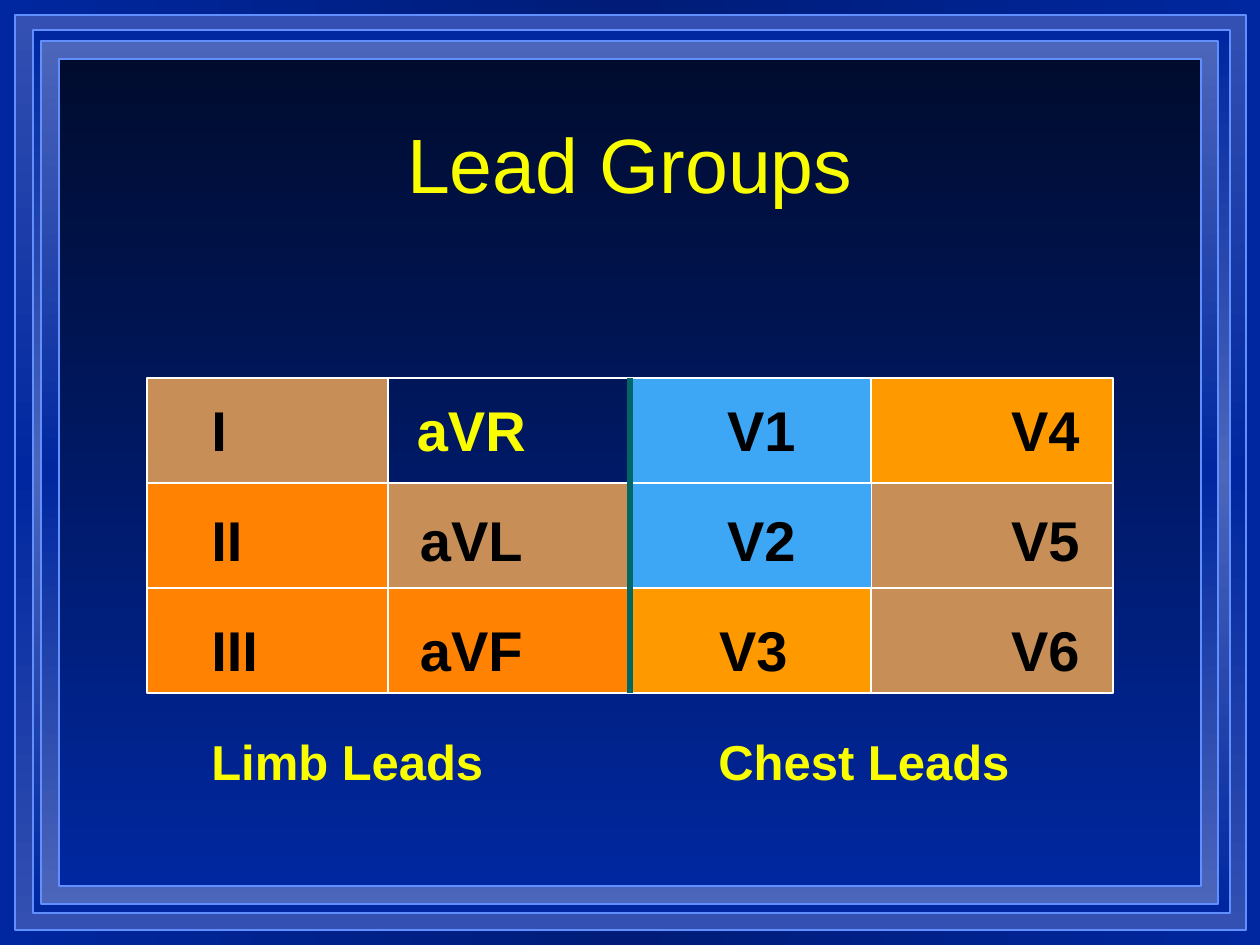
import pptx
import pptx.util
import pptx.dml.color
import pptx.enum.shapes
import pptx.enum.text
import pptx.oxml.ns
from lxml import etree

WIDTH, HEIGHT = 1260, 945
EMU_PER_PX = 914400 / 126
COLORS = {
    "blue": "00279F", "deep": "001C78", "night": "000B2E",
    "haze": "3350B2", "mist": "4C66BB", "edge": "618FFD",
    "yellow": "FAFD00", "black": "000000", "white": "FFFFFF",
    "tan": "C78F57", "orange": "FF8203", "amber": "FF9900",
    "sky": "3DA6F5", "teal": "006666",
}
qn = pptx.oxml.ns.qn
ANCHOR = pptx.enum.text.MSO_ANCHOR
ALIGN = pptx.enum.text.PP_ALIGN


def px(length):
    return pptx.util.Emu(round(length * EMU_PER_PX))


def rgb(name):
    return pptx.dml.color.RGBColor.from_string(COLORS[name])


class SlideBuilder:
    font_name = "Arial"

    def __init__(self, slide):
        self.slide = slide

    def gradient(self, fill, element, names, angle):
        """Spread the named colours evenly over a linear gradient."""
        fill.gradient()
        fill.gradient_angle = angle
        stops = element.find(".//" + qn("a:gsLst"))
        for stop in list(stops):
            stops.remove(stop)
        for index, name in enumerate(names):
            position = str(100000 * index // (len(names) - 1))
            stop = etree.SubElement(stops, qn("a:gs"), pos=position)
            etree.SubElement(stop, qn("a:srgbClr"), val=COLORS[name])

    def background(self, names):
        self.gradient(self.slide.background.fill, self.slide.element, names, 0)

    def rectangle(self, box, fill=None, line=None):
        """Draw a box; fill is a colour name, a tuple of them, or None."""
        shape = self.slide.shapes.add_shape(
            pptx.enum.shapes.MSO_SHAPE.RECTANGLE, *map(px, box))
        shape.shadow.inherit = False
        if fill is None:
            shape.fill.background()
        elif isinstance(fill, tuple):
            self.gradient(shape.fill, shape.element, fill, 270)
        else:
            shape.fill.solid()
            shape.fill.fore_color.rgb = rgb(fill)
        if line:
            shape.line.color.rgb = rgb(line)
            shape.line.width = pptx.util.Pt(1)
        else:
            shape.line.fill.background()

    def text_box(self, box, wrap=True, anchor=ANCHOR.TOP):
        frame = self.slide.shapes.add_textbox(*map(px, box)).text_frame
        frame.word_wrap = wrap
        frame.vertical_anchor = anchor
        return frame

    def run(self, paragraph, text, size, color="yellow", bold=True):
        run = paragraph.add_run()
        run.text = text
        values = {"name": self.font_name, "size": pptx.util.Pt(size), "bold": bold}
        for name, value in values.items():
            setattr(run.font, name, value)
        run.font.color.rgb = rgb(color)

    def paragraph_format(self, paragraph, values, tabs=()):
        for name, value in values.items():
            setattr(paragraph, name, value)
        if tabs:
            properties = paragraph._p.get_or_add_pPr()
            tab_list = etree.SubElement(properties, qn("a:tabLst"))
            for tab in tabs:
                etree.SubElement(tab_list, qn("a:tab"), pos=str(px(tab)), algn="ctr")

    def line(self, start, end, color, width):
        connector = self.slide.shapes.add_connector(
            pptx.enum.shapes.MSO_CONNECTOR.STRAIGHT, *map(px, start + end))
        connector.line.color.rgb = rgb(color)
        connector.line.width = pptx.util.Pt(width)
        etree.SubElement(connector.element.spPr, qn("a:effectLst"))


FRAMES = [
    ((15, 15, 1231, 915), ("haze", "blue", "haze")),
    ((33, 30, 1197, 883), ("blue", "mist", "blue")),
    ((41, 41, 1177, 863), ("mist", "blue", "mist")),
    ((59, 59, 1142, 827), ("night", "blue")),
]
GRID_LEFT, GRID_TOP, GRID_WIDTH, ROW_HEIGHT = 147, 378, 966, 105
CELL_FILLS = [
    ["tan", None, "sky", "amber"],
    ["orange", "tan", "sky", "tan"],
    ["orange", "orange", "amber", "tan"],
]
# Lead names with the centre of the third column
LEADS = [
    (["I", "aVR", "V1", "V4"], 550),
    (["II", "aVL", "V2", "V5"], 550),
    (["III", "aVF", "V3", "V6"], 542),
]


def main():
    presentation = pptx.Presentation()
    presentation.slide_width, presentation.slide_height = px(WIDTH), px(HEIGHT)
    builder = SlideBuilder(
        presentation.slides.add_slide(presentation.slide_layouts[6]))

    # Background and nested frames
    builder.background(("blue", "deep", "blue"))
    for box, names in FRAMES:
        builder.rectangle(box, names, "edge")

    # Captions under the grid
    for left, width, caption in [(199, 301, "Limb Leads"), (706, 320, "Chest Leads")]:
        frame = builder.text_box((left, 725, width, 72), wrap=False)
        builder.run(frame.paragraphs[0], caption, 28)

    # Coloured cells, the top row last so that its outline stays on top
    edges = [GRID_LEFT + GRID_WIDTH * column // 4 for column in range(5)]
    for column in reversed(range(4)):
        for row in (1, 2, 0):
            box = (edges[column], GRID_TOP + row * ROW_HEIGHT,
                   edges[column + 1] - edges[column], ROW_HEIGHT)
            outline = None if (row, column) == (1, 2) else "white"
            builder.rectangle(box, CELL_FILLS[row][column], outline)

    # Lead names, set in columns by centred tabs
    frame = builder.text_box((199, 402, 906, 282))
    for row, (names, third_column) in enumerate(LEADS):
        paragraph = frame.add_paragraph() if row else frame.paragraphs[0]
        builder.paragraph_format(
            paragraph,
            {"line_spacing": 0.8, "space_before": pptx.util.Pt(32.3 if row else 3)},
            tabs=(260, third_column, 834))
        for column, name in enumerate(names):
            text = "\t" + name if column else name
            color = "yellow" if name == "aVR" else "black"
            builder.run(paragraph, text, 32, color)

    # Divider between limb and chest leads
    bottom = GRID_TOP + 3 * ROW_HEIGHT
    builder.line((edges[2], GRID_TOP), (edges[2], bottom), "teal", 4)

    # Title
    frame = builder.text_box((154, 84, 952, 158), anchor=ANCHOR.MIDDLE)
    builder.paragraph_format(frame.paragraphs[0], {"alignment": ALIGN.CENTER})
    builder.run(frame.paragraphs[0], "Lead Groups", 44, bold=False)

    presentation.save("out.pptx")


if __name__ == "__main__":
    main()
